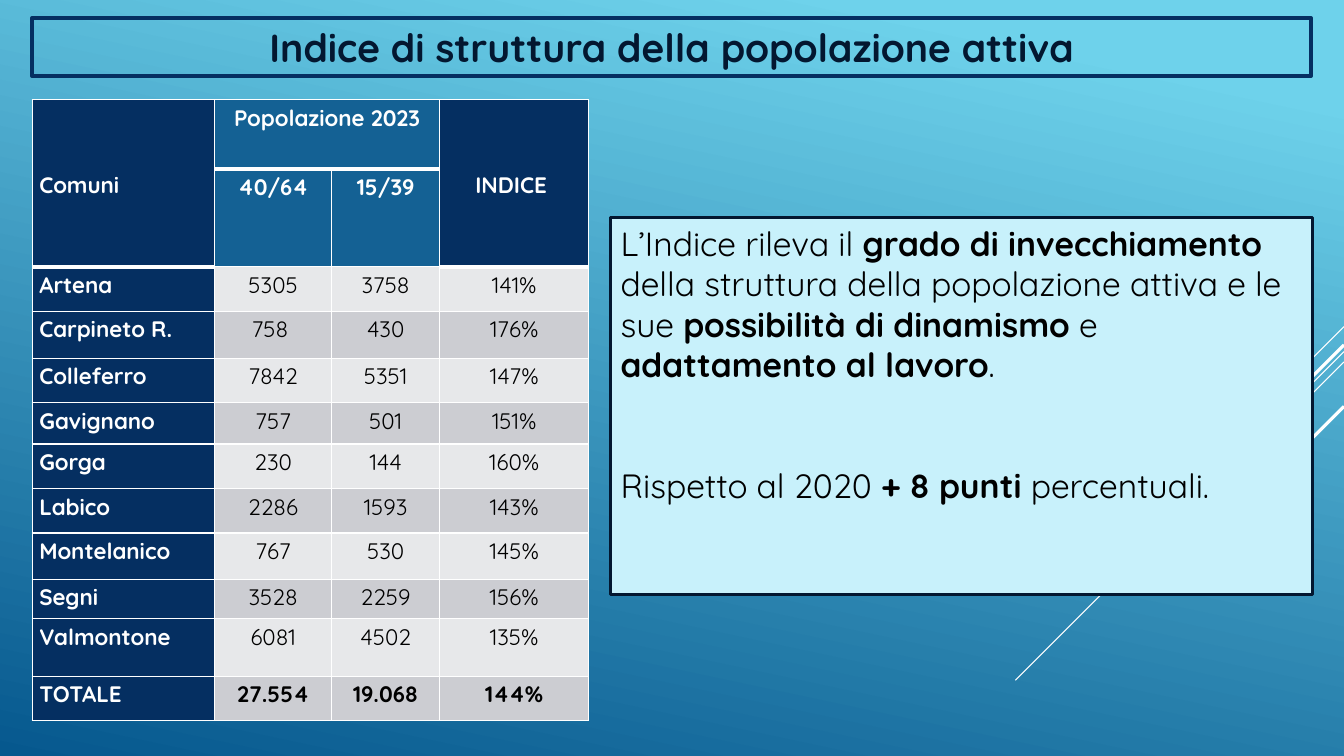
"""Builds the slide on the structure index of the active population."""
from lxml import etree
from pptx import Presentation
from pptx.dml.color import RGBColor
from pptx.enum.shapes import MSO_CONNECTOR, MSO_SHAPE
from pptx.enum.text import MSO_ANCHOR, MSO_AUTO_SIZE, PP_ALIGN
from pptx.oxml.ns import qn
from pptx.util import Cm, Pt

STRAIGHT, RECTANGLE = MSO_CONNECTOR.STRAIGHT, MSO_SHAPE.RECTANGLE
TOP, MIDDLE = MSO_ANCHOR.TOP, MSO_ANCHOR.MIDDLE
LEFT, CENTER, JUSTIFY = PP_ALIGN.LEFT, PP_ALIGN.CENTER, PP_ALIGN.JUSTIFY
NO_FIT = MSO_AUTO_SIZE.NONE

FONT = "Quicksand"
COLORS = {
    "sky": "6ED2EB", "sea": "06588E", "navy": "052F61", "ink": "031730",
    "blue": "146194", "light": "E7E8EA", "grey": "CCCDD2", "pale": "C8F1FB",
    "white": "FFFFFF", "black": "000000",
}
TITLE = "Indice di struttura della popolazione attiva"
ROWS = [
    ("Comuni", "Popolazione 2023", "", "INDICE "),
    ("", "40/64", "15/39", ""),
    ("Artena", "5305", "3758", "141%"),
    ("Carpineto R.", "758 ", "430", "176%"),
    ("Colleferro", "7842", "5351", "147%"),
    ("Gavignano", "757", "501", "151%"),
    ("Gorga", "230", "144", "160%"),
    ("Labico", "2286", "1593", "143%"),
    ("Montelanico", "767", "530", "145%"),
    ("Segni", "3528", "2259", "156%"),
    ("Valmontone", "6081", "4502", "135%"),
    ("TOTALE", "27.554", "19.068", "144%"),
]
HEADER_ROWS = 2
COLUMN_WIDTHS = [4.6, 2.95, 2.72, 3.76]
ROW_HEIGHTS = [1.75, 2.46, 1.12, 1.19, 1.12, 1.04, 1.12, 1.12, 1.17, 0.99, 1.45, 1.12]
MERGES = [((0, 0), (1, 0)), ((0, 1), (0, 2)), ((0, 3), (1, 3))]
COMMENTARY = [
    [("L’Indice rileva il ", False), ("grado di invecchiamento", True),
     (" della struttura della popolazione attiva e le sue ", False),
     ("possibilità di dinamismo", True), (" e ", False),
     ("adattamento al lavoro", True), (".", False)],
    [("Rispetto al 2020 ", False), ("+ 8 punti ", True), ("percentuali.", False)],
]
PARAGRAPH_GAP = 58
SLIDE_WIDTH, SLIDE_HEIGHT = 33.87, 19.05
# top at the right edge, reach along the 45° diagonal, line width
DIAGONALS = [(8.23, 2.54, 0.75), (8.86, 8.28, 0.75), (9.12, 5.27, 0.75),
             (8.69, 4.85, 2.25), (10.24, 3.53, 2.25)]


def color(name):
    return RGBColor.from_string(COLORS[name])


def set_font(font, size, name, bold=None):
    font.name, font.size, font.bold = FONT, Pt(size), bold
    font.color.rgb = color(name)


def set_line(line, name, width):
    line.color.rgb = color(name)
    line.width = Pt(width)


def paint_background(page):
    fill = page.background.fill
    fill.gradient()
    fill.gradient_angle = 360 - 102
    for stop, (name, position) in zip(fill.gradient_stops, [("sky", 0.1), ("sea", 1)]):
        stop.color.rgb = color(name)
        stop.position = position


def add_diagonals(page):
    for top, reach, width in DIAGONALS:
        line = page.shapes.add_connector(
            STRAIGHT, Cm(SLIDE_WIDTH), Cm(top), Cm(SLIDE_WIDTH - reach), Cm(top + reach))
        set_line(line.line, "white", width)
        etree.SubElement(line._element.spPr, qn("a:effectLst"))


def fill_title(page):
    title = page.shapes.title
    title.left, title.top, title.width, title.height = Cm(0.81), Cm(0.46), Cm(32.23), Cm(1.45)
    set_line(title.line, "navy", 3)
    frame = title.text_frame
    frame.text = TITLE
    frame.auto_size, frame.vertical_anchor = NO_FIT, MIDDLE
    para = frame.paragraphs[0]
    para.alignment = CENTER
    set_font(para.font, 28, "ink", True)


def set_borders(cell, bottom):
    properties = cell._tc.get_or_add_tcPr()
    for index, (side, width) in enumerate([("L", 1), ("R", 1), ("T", 1), ("B", bottom)]):
        border = etree.Element(qn(f"a:ln{side}"), w=str(Pt(width)))
        solid = etree.SubElement(border, qn("a:solidFill"))
        etree.SubElement(solid, qn("a:srgbClr"), val=COLORS["white"])
        properties.insert(index, border)


def cell_fill(row, column):
    if column == 0 or (row < HEADER_ROWS and column == 3):
        return "navy"
    if row < HEADER_ROWS:
        return "blue"
    return "grey" if row % 2 else "light"


def add_population_table(page):
    table = page.shapes.add_table(
        len(ROWS), len(COLUMN_WIDTHS), Cm(0.81), Cm(2.51),
        Cm(sum(COLUMN_WIDTHS)), Cm(sum(ROW_HEIGHTS))).table
    table.first_row = table.horz_banding = False
    for column, width in zip(table.columns, COLUMN_WIDTHS):
        column.width = Cm(width)
    for row, height in zip(table.rows, ROW_HEIGHTS):
        row.height = Cm(height)
    for start, end in MERGES:
        table.cell(*start).merge(table.cell(*end))
    for row, texts in enumerate(ROWS):
        for column, text in enumerate(texts):
            cell = table.cell(row, column)
            header = row < HEADER_ROWS
            outer = column in (0, 3)
            cell.text = text
            cell.margin_left = cell.margin_right = Cm(0.18)
            cell.margin_top = cell.margin_bottom = 0
            cell.vertical_anchor = MIDDLE if header and outer else TOP
            cell.fill.solid()
            cell.fill.fore_color.rgb = color(cell_fill(row, column))
            set_borders(cell, 3 if row == 0 or (header and outer) else 1)
            para = cell.text_frame.paragraphs[0]
            para.alignment = CENTER if column else JUSTIFY
            para.line_spacing, para.space_after = 1.15, Pt(10)
            white = header or column == 0
            set_font(para.font, 16, "white" if white else "black",
                     white or row == len(ROWS) - 1)


def add_commentary(page):
    box = page.shapes.add_shape(RECTANGLE, Cm(15.39), Cm(5.49), Cm(17.68), Cm(9.5))
    box.shadow.inherit = False
    box.fill.solid()
    box.fill.fore_color.rgb = color("pale")
    set_line(box.line, "ink", 2.25)
    frame = box.text_frame
    frame.word_wrap, frame.vertical_anchor = True, TOP
    for index, spans in enumerate(COMMENTARY):
        para = frame.add_paragraph() if index else frame.paragraphs[0]
        para.alignment = LEFT
        para.space_before = Pt(PARAGRAPH_GAP * index)
        set_font(para.font, 24, "black")
        for text, bold in spans:
            span = para.add_run()
            span.text, span.font.bold = text, bold


def main():
    deck = Presentation()
    deck.slide_width, deck.slide_height = Cm(SLIDE_WIDTH), Cm(SLIDE_HEIGHT)
    page = deck.slides.add_slide(deck.slide_layouts[5])
    paint_background(page)
    add_diagonals(page)
    fill_title(page)
    add_population_table(page)
    add_commentary(page)
    deck.save("out.pptx")


if __name__ == "__main__":
    main()
